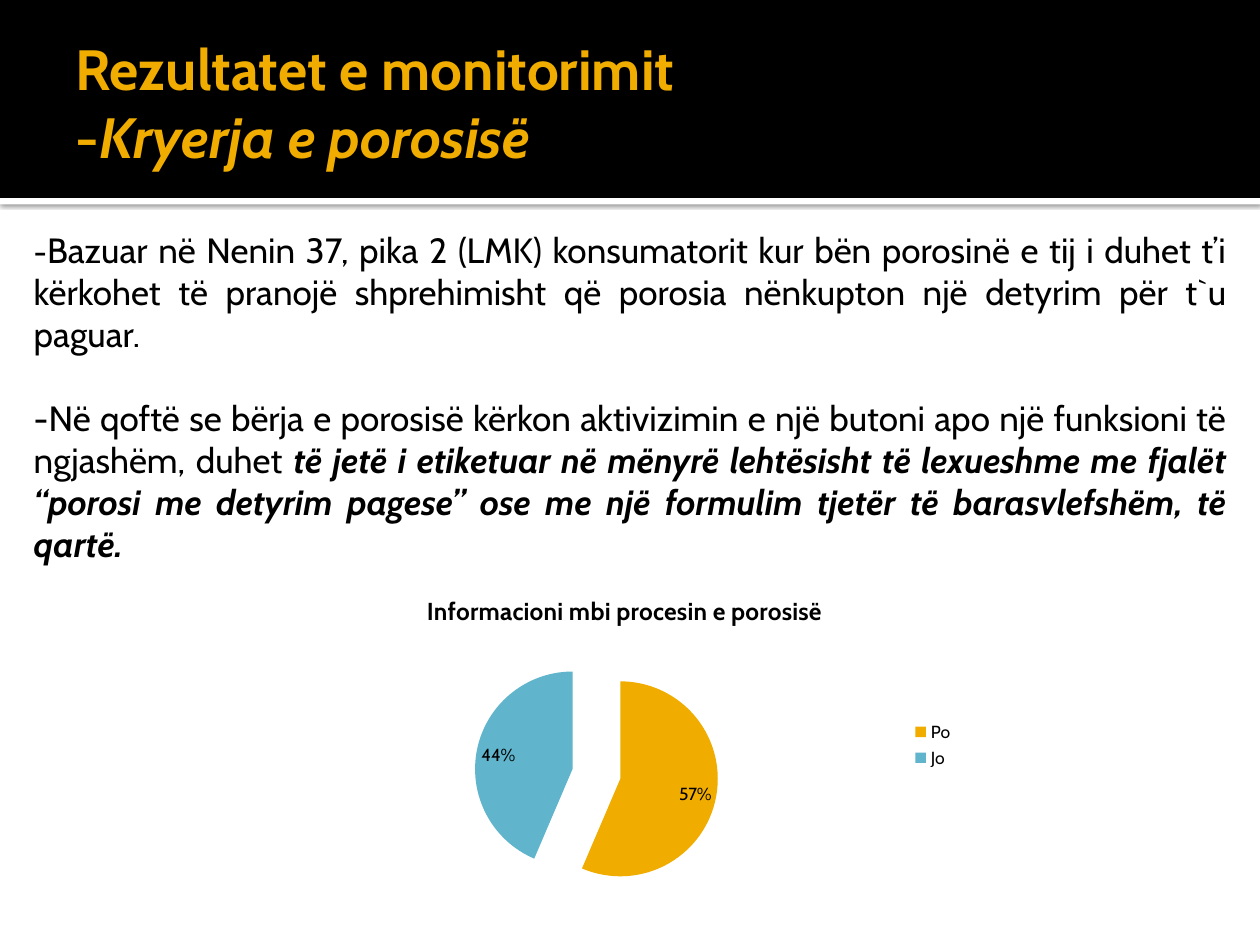
from dataclasses import dataclass

import lxml.etree
import pptx
import pptx.chart.data
import pptx.dml.color
import pptx.enum.chart
import pptx.enum.shapes
import pptx.enum.text
import pptx.oxml
import pptx.oxml.ns
import pptx.util
from pptx.util import Cm

FONT = "Cabin"
BLACK, WHITE, GOLD, BLUE = "000000", "FFFFFF", "F0AD00", "60B5CC"


@dataclass(frozen=True)
class Frame:
    left: float
    top: float
    width: float
    height: float

    def lengths(self) -> tuple:
        return Cm(self.left), Cm(self.top), Cm(self.width), Cm(self.height)


@dataclass(frozen=True)
class Band:
    frame: Frame
    color: str
    shadow: bool = False


@dataclass(frozen=True)
class Slice:
    name: str
    value: int
    color: str


BANDS = [
    Band(Frame(0, 3.99, 25.4, 0.13), WHITE, shadow=True),
    Band(Frame(0, 0, 25.4, 3.99), BLACK),
]
SLICES = [Slice("Po", 57, GOLD), Slice("Jo", 44, BLUE)]


def rgb(color: str) -> pptx.dml.color.RGBColor:
    return pptx.dml.color.RGBColor.from_string(color)


def format_font(font, size: float, color: str = BLACK, bold: bool = False, italic: bool = False) -> None:
    font.name = FONT
    font.size = pptx.util.Pt(size)
    font.bold = bold
    font.italic = italic
    font.color.rgb = rgb(color)


def add_span(para, text: str, **style) -> None:
    span = para.add_run()
    span.text = text
    format_font(span.font, **style)


def draw_band(page, band: Band) -> None:
    shape = page.shapes.add_shape(pptx.enum.shapes.MSO_SHAPE.RECTANGLE, *band.frame.lengths())
    shape.shadow.inherit = False
    shape.fill.solid()
    shape.fill.fore_color.rgb = rgb(band.color)
    shape.line.fill.background()
    if band.shadow:
        effects = shape.element.spPr.find(pptx.oxml.ns.qn("a:effectLst"))
        effects.append(pptx.oxml.parse_xml(
            f'<a:outerShdw {pptx.oxml.ns.nsdecls("a")} blurRad="31750" dist="10160" dir="5400000">'
            f'<a:srgbClr val="{BLACK}"><a:alpha val="60000"/></a:srgbClr></a:outerShdw>'
        ))


def draw_title(page, frame: Frame) -> None:
    title = page.shapes.title
    page.shapes.element.append(title.element)
    title.left, title.top, title.width, title.height = frame.lengths()
    box = title.text_frame
    box.word_wrap = True
    box.auto_size = pptx.enum.text.MSO_AUTO_SIZE.NONE
    box.vertical_anchor = pptx.enum.text.MSO_ANCHOR.MIDDLE
    box.margin_left = Cm(0.25)
    box.margin_right = box.margin_top = box.margin_bottom = Cm(0.13)
    para = box.paragraphs[0]
    para.alignment = pptx.enum.text.PP_ALIGN.LEFT
    style = dict(size=32.4, color=GOLD, bold=True)
    add_span(para, "Rezultatet e monitorimit", **style)
    para.add_line_break()
    add_span(para, "-", **style)
    add_span(para, "Kryerja e porosisë", italic=True, **style)


def draw_body(page, frame: Frame) -> None:
    box = page.shapes.add_textbox(*frame.lengths()).text_frame
    box.word_wrap = True
    box.auto_size = pptx.enum.text.MSO_AUTO_SIZE.SHAPE_TO_FIT_TEXT
    box.vertical_anchor = pptx.enum.text.MSO_ANCHOR.MIDDLE
    first, second = box.paragraphs[0], box.add_paragraph()
    for para in (first, second):
        para.alignment = pptx.enum.text.PP_ALIGN.JUSTIFY
    second.space_before = pptx.util.Pt(24)
    add_span(first, "-", size=18)
    add_span(
        first,
        "Bazuar në Nenin 37, pika 2 (LMK) konsumatorit kur bën porosinë e tij i duhet t’i "
        "kërkohet të pranojë shprehimisht që porosia nënkupton një detyrim për t`u paguar.",
        size=20,
    )
    add_span(
        second,
        "-Në qoftë se bërja e porosisë kërkon aktivizimin e një butoni apo një funksioni "
        "të ngjashëm, duhet ",
        size=20,
    )
    add_span(
        second,
        "të jetë i etiketuar në mënyrë lehtësisht të lexueshme me fjalët “porosi me detyrim "
        "pagese” ose me një formulim tjetër të barasvlefshëm, të qartë.",
        size=20, bold=True, italic=True,
    )


def draw_pie(page, frame: Frame, slices: list[Slice]) -> None:
    data = pptx.chart.data.CategoryChartData()
    data.categories = [part.name for part in slices]
    data.add_series("Series 1", [part.value for part in slices])
    chart = page.shapes.add_chart(pptx.enum.chart.XL_CHART_TYPE.PIE, *frame.lengths(), data).chart
    format_font(chart.font, size=10)

    chart.has_title = True
    add_span(chart.chart_title.text_frame.paragraphs[0],
             "Informacioni mbi procesin e porosisë", size=14, bold=True)
    chart.has_legend = True
    chart.legend.position = pptx.enum.chart.XL_LEGEND_POSITION.RIGHT
    chart.legend.include_in_layout = False

    plot = chart.plots[0]
    plot.vary_by_categories = True
    series = plot.series[0]
    explosion = lxml.etree.Element(pptx.oxml.ns.qn("c:explosion"), val="25")
    series._element.find(pptx.oxml.ns.qn("c:cat")).addprevious(explosion)
    for index, part in enumerate(slices):
        fill = series.points[index].format.fill
        fill.solid()
        fill.fore_color.rgb = rgb(part.color)

    plot.has_data_labels = True
    labels = plot.data_labels
    labels.show_value = True
    labels.show_percentage = False
    labels.number_format = '0"%"'
    labels.number_format_is_linked = False
    format_font(labels.font, size=10)


def main() -> None:
    deck = pptx.Presentation()
    deck.slide_width, deck.slide_height = Cm(25.4), Cm(19.05)
    page = deck.slides.add_slide(deck.slide_layouts.get_by_name("Title Only"))
    for band in BANDS:
        draw_band(page, band)
    draw_title(page, Frame(1.27, 0.56, 22.86, 3))
    draw_body(page, Frame(0.43, 4.45, 24.56, 7.09))
    draw_pie(page, Frame(5.71, 11.62, 13.77, 6.79), SLICES)
    deck.save("out.pptx")


if __name__ == "__main__":
    main()
